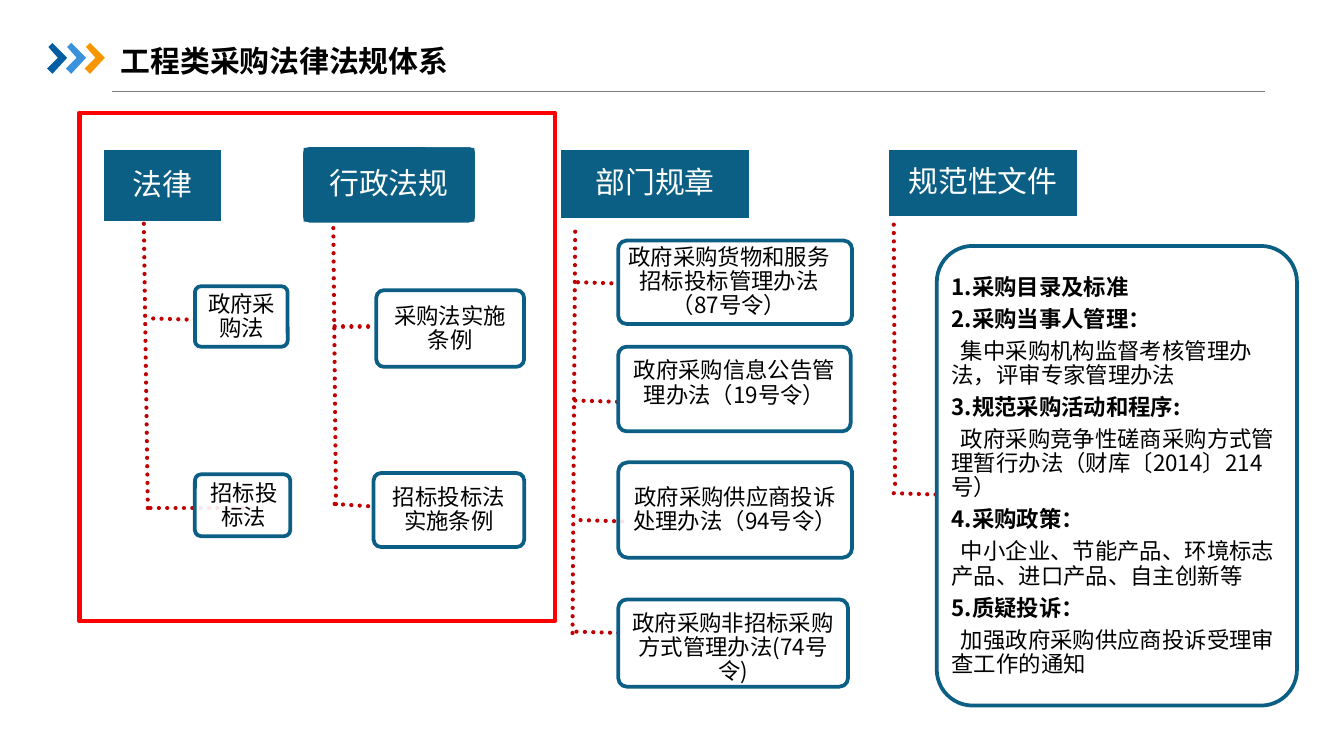
from lxml.etree import SubElement
from pptx import Presentation
from pptx.dml.color import RGBColor
from pptx.enum.dml import MSO_LINE
from pptx.enum.shapes import MSO_CONNECTOR, MSO_SHAPE
from pptx.enum.text import MSO_ANCHOR, PP_ALIGN
from pptx.oxml.ns import qn
from pptx.util import Inches, Pt

FONT = "Noto Sans CJK SC"
WHITE = RGBColor(0xFF, 0xFF, 0xFF)
BLACK = RGBColor(0x00, 0x00, 0x00)
TEAL = RGBColor(0x0B, 0x5F, 0x84)
DOT_RED = RGBColor(0xC0, 0x00, 0x00)
FRAME_RED = RGBColor(0xFF, 0x00, 0x00)
GRAY = RGBColor(0x7F, 0x7F, 0x7F)
CHEVRON_COLORS = [
    RGBColor(0x00, 0x5D, 0xA2),
    RGBColor(0x39, 0x92, 0xDB),
    RGBColor(0xF7, 0x96, 0x00),
]
CHEVRON_POINTS = [(0.01, 0.03), (0.04, 0), (0.15, 0.11), (0.04, 0.23), (0, 0.19), (0.08, 0.11)]

HEADINGS = [
    ("法律", (0.75, 1.08, 0.92, 0.59), (0.76, 1.1, 0.9, 0.56), WHITE),
    ("行政法规", (2.24, 1.08, 1.31, 0.59), (2.26, 1.1, 1.27, 0.55), None),
    ("部门规章", (4.13, 1.08, 1.47, 0.57), (4.16, 1.1, 1.43, 0.54), WHITE),
    ("规范性文件", (6.57, 1.08, 1.47, 0.56), (6.6, 1.1, 1.43, 0.52), WHITE),
]
BRANCHES = [
    (1.1, 3.78, 1.07, 1.63), (1.14, 2.37, 1.46, 2.38), (1.12, 3.78, 1.83, 3.78),
    (2.5, 3.75, 2.48, 1.68), (2.49, 2.43, 2.77, 2.43), (2.49, 3.75, 2.79, 3.77),
    (4.26, 4.71, 4.28, 1.68), (4.3, 2.1, 4.61, 2.11), (4.28, 2.98, 4.6, 2.99),
    (4.32, 3.87, 4.64, 3.88), (4.29, 4.7, 4.61, 4.71),
    (6.66, 3.6, 6.65, 1.65), (6.65, 3.67, 6.97, 3.68),
]
CARDS = [
    ("政府采购法", (1.45, 2.13, 0.69, 0.45), (1.47, 2.15, 0.66, 0.42)),
    ("招标投标法", (1.45, 3.53, 0.71, 0.46), (1.47, 3.55, 0.69, 0.43)),
    ("采购法实施条例", (2.8, 2.16, 1.1, 0.57), (2.82, 2.18, 1.06, 0.54)),
    ("政府采购货物和服务招标投标管理办法（87号令）", (4.6, 1.79, 1.74, 0.62), (4.62, 1.81, 1.61, 0.58)),
    ("政府采购信息公告管理办法（19号令）", (4.6, 2.58, 1.73, 0.63), (4.62, 2.52, 1.69, 0.67)),
    ("政府采购供应商投诉处理办法（94号令）", (4.6, 3.44, 1.74, 0.71), (4.62, 3.46, 1.7, 0.67)),
    ("政府采购非招标采购方式管理办法(74号令)", (4.6, 4.46, 1.71, 0.65), (4.62, 4.57, 1.67, 0.51)),
]
DOCUMENTS = [
    ("1.采购目录及标准", None),
    ("2.采购当事人管理：", "集中采购机构监督考核管理办法，评审专家管理办法"),
    ("3.规范采购活动和程序:", "政府采购竞争性磋商采购方式管理暂行办法（财库〔2014〕214号）"),
    ("4.采购政策：", "中小企业、节能产品、环境标志产品、进口产品、自主创新等"),
    ("5.质疑投诉：", "加强政府采购供应商投诉受理审查工作的通知"),
]


def inches(values):
    return [Inches(v) for v in values]


def add_box(slide, kind, box, fill=None, line=None, width=2):
    sp = slide.shapes.add_shape(kind, *inches(box))
    sp.shadow.inherit = False
    if kind == MSO_SHAPE.ROUNDED_RECTANGLE:
        sp.adjustments[0] = 0.1
    if fill is None:
        sp.fill.background()
    else:
        sp.fill.solid()
        sp.fill.fore_color.rgb = fill
    if line is None:
        sp.line.fill.background()
    else:
        sp.line.color.rgb = line
        sp.line.width = Pt(width)
    return sp


def add_card(slide, box):
    sp = add_box(slide, MSO_SHAPE.ROUNDED_RECTANGLE, box, WHITE, TEAL)
    color = sp._element.spPr.find(qn("a:solidFill"))[0]
    SubElement(color, qn("a:alpha")).set("val", "90000")
    return sp


def add_line(slide, ends, color, width):
    line = slide.shapes.add_connector(MSO_CONNECTOR.STRAIGHT, *inches(ends))
    line.line.color.rgb = color
    line.line.width = Pt(width)
    SubElement(line._element.spPr, qn("a:effectLst"))
    return line


def add_branch(slide, ends):
    line = add_line(slide, ends, DOT_RED, 2.25)
    line.line.dash_style = MSO_LINE.ROUND_DOT
    line._element.spPr.find(qn("a:ln")).set("cap", "rnd")


def set_frame(sp, inset, wrap=True, anchor=MSO_ANCHOR.MIDDLE):
    tf = sp.text_frame
    tf.word_wrap = wrap
    tf.vertical_anchor = anchor
    tf.margin_left = tf.margin_right = Inches(inset[0])
    tf.margin_top = tf.margin_bottom = Inches(inset[1])
    return tf


def format_text(p, size=12, color=BLACK, bold=False, align=PP_ALIGN.CENTER, spaced=True):
    p.alignment = align
    if spaced:
        p.line_spacing = 0.9
        p.space_after = Pt(round(size * 0.35, 1))
    for r in p.runs:
        r.font.name = FONT
        r.font.size = Pt(size)
        r.font.bold = bold
        r.font.color.rgb = color
        SubElement(r._r.get_or_add_rPr(), qn("a:ea")).set("typeface", FONT)


def write(sp, text, inset, **style):
    tf = set_frame(sp, inset)
    tf.text = text
    format_text(tf.paragraphs[0], **style)


def add_heading(slide, text, outer, inner, line):
    add_box(slide, MSO_SHAPE.ROUNDED_RECTANGLE, outer, TEAL, WHITE)
    sp = add_box(slide, MSO_SHAPE.RECTANGLE, inner, TEAL, line)
    write(sp, text, (0.06, 0.04), size=16, color=WHITE)


def add_documents(slide):
    add_card(slide, (6.97, 1.83, 2.68, 3.42))
    sp = slide.shapes.add_textbox(*inches((7.05, 1.9, 2.52, 3.29)))
    tf = set_frame(sp, (0.03, 0.02))
    items = [(text, i == 0) for pair in DOCUMENTS for i, text in enumerate(pair) if text]
    for i, (text, bold) in enumerate(items):
        p = tf.add_paragraph() if i else tf.paragraphs[0]
        p.text = text
        format_text(p, bold=bold, align=PP_ALIGN.LEFT)
        if not bold:
            pPr = p._p.get_or_add_pPr()
            pPr.set("indent", str(Inches(0.07)))
            pPr.set("hangingPunct", "0")


def add_title(slide, text):
    sp = slide.shapes.add_textbox(*inches((0.9, 0.32, 2.46, 0.27)))
    tf = set_frame(sp, (0, 0), wrap=False, anchor=MSO_ANCHOR.TOP)
    tf.text = text
    format_text(tf.paragraphs[0], size=16, bold=True, align=PP_ALIGN.LEFT, spaced=False)


def add_chevron(slide, left, top, color):
    points = [(Inches(left + x), Inches(top + y)) for x, y in CHEVRON_POINTS]
    builder = slide.shapes.build_freeform(*points[0])
    builder.add_line_segments(points[1:], close=True)
    sp = builder.convert_to_shape()
    sp.shadow.inherit = False
    sp.fill.solid()
    sp.fill.fore_color.rgb = color
    sp.line.fill.background()


def main():
    prs = Presentation()
    prs.slide_width = Inches(10)
    prs.slide_height = Inches(10) * 9 // 16
    slide = prs.slides.add_slide(prs.slide_layouts[6])

    for heading in HEADINGS:
        add_heading(slide, *heading)
    for ends in BRANCHES:
        add_branch(slide, ends)
    for text, box, label in CARDS:
        add_card(slide, box)
        write(slide.shapes.add_textbox(*inches(label)), text, (0.04, 0.03))
    write(add_card(slide, (2.78, 3.52, 1.12, 0.55)), "招标投标法实施条例", (0.1, 0.05))
    add_documents(slide)

    add_title(slide, "工程类采购法律法规体系")
    add_box(slide, MSO_SHAPE.RECTANGLE, (0.59, 0.84, 3.54, 3.78), line=FRAME_RED, width=2.5)
    add_line(slide, (0.83, 0.68, 9.41, 0.68), GRAY, 0.75)
    for i, color in enumerate(CHEVRON_COLORS):
        add_chevron(slide, 0.35 + 0.14 * i, 0.32, color)

    prs.save("out.pptx")


if __name__ == "__main__":
    main()
